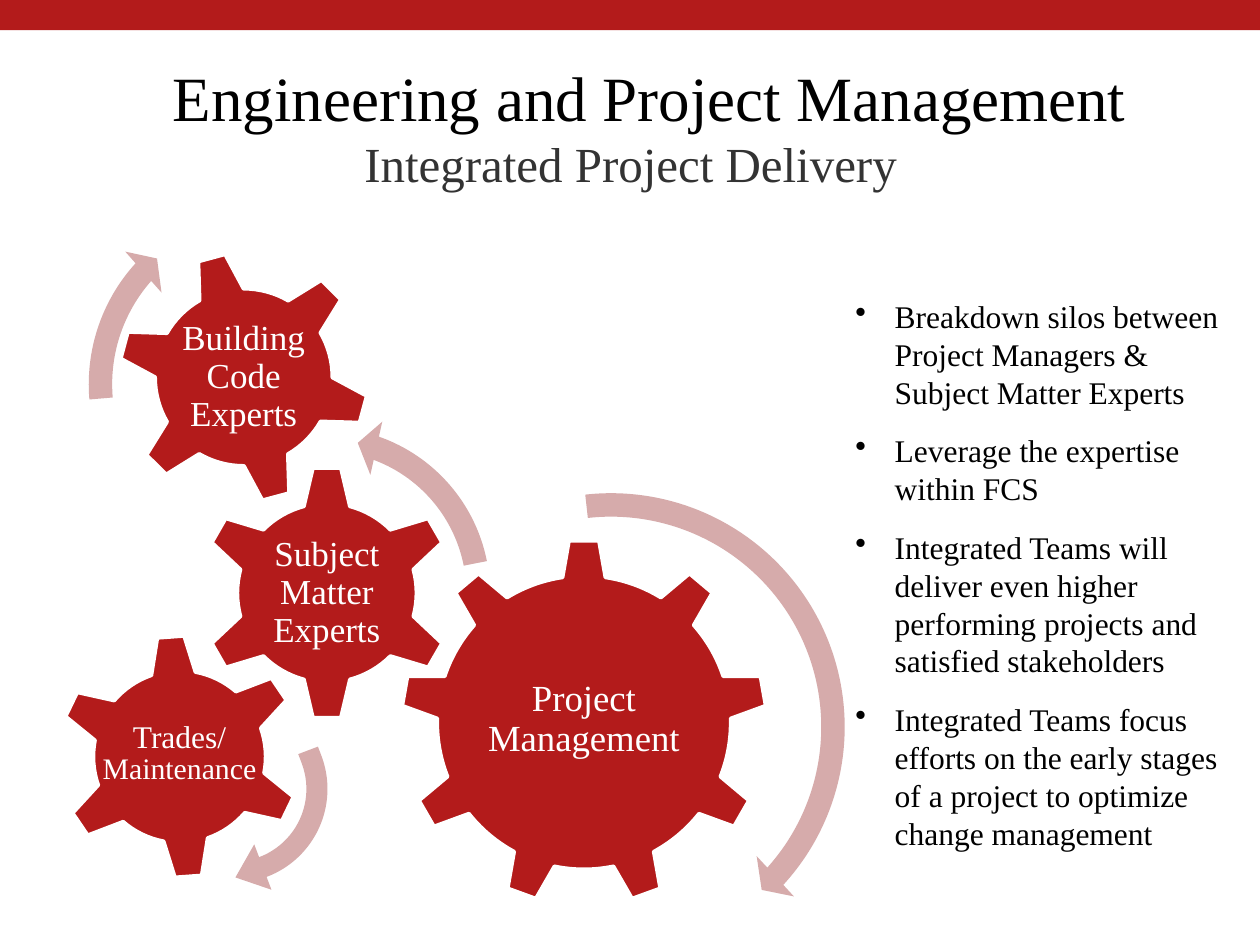
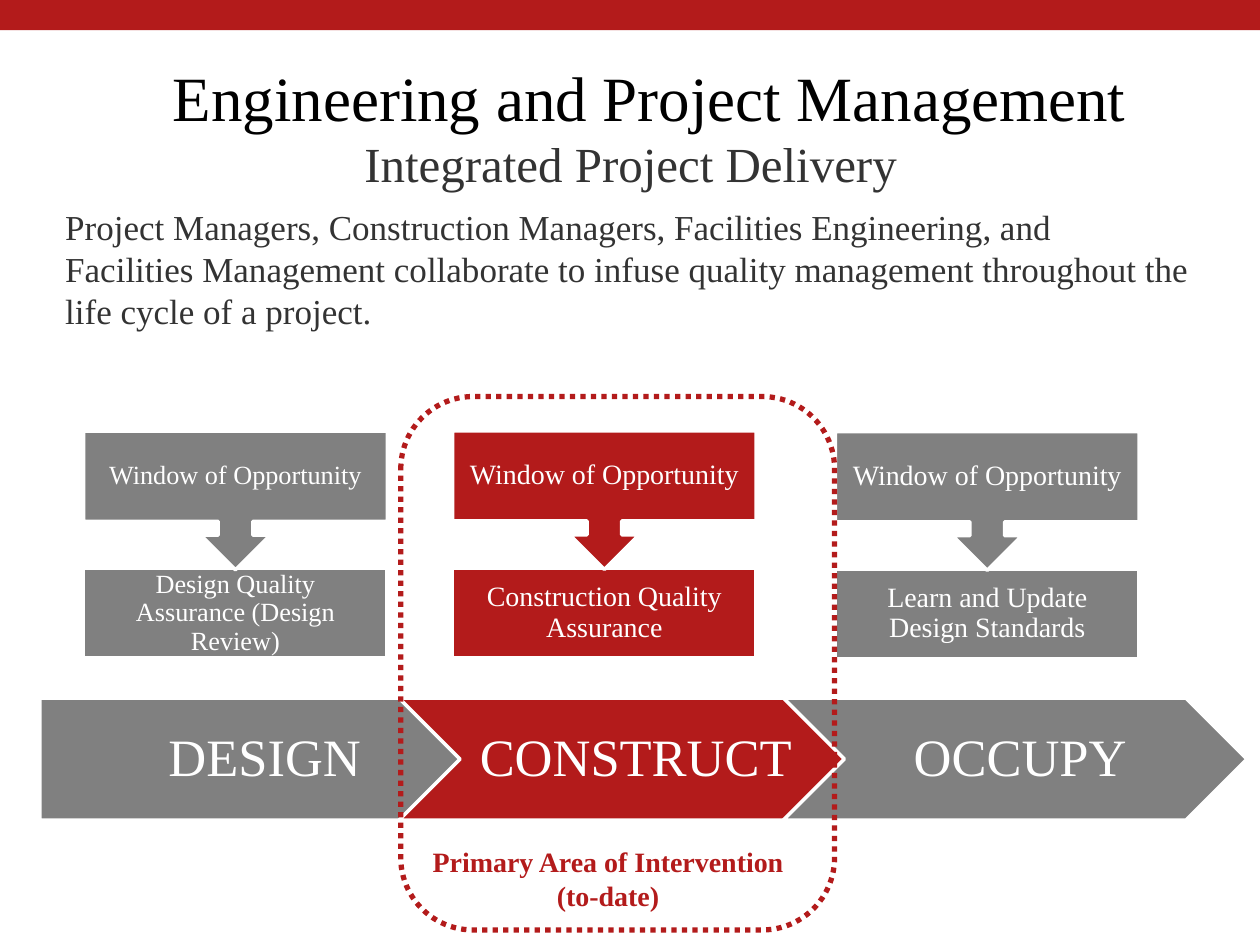
from lxml import etree
from pptx import Presentation
from pptx import util as u
from pptx.dml.color import RGBColor
from pptx.enum import dml, shapes, text
from pptx.oxml import ns

Pt = u.Pt
RED = RGBColor(0xB3, 0x1B, 0x1B)
PINK = RGBColor(0xD6, 0xAB, 0xAB)
GRAY = RGBColor(0x80, 0x80, 0x80)
DARK = RGBColor(0x33, 0x33, 0x33)
BLACK = RGBColor(0, 0, 0)
WHITE = RGBColor(0xFF, 0xFF, 0xFF)
FONT = "Times New Roman"
SHAPE = shapes.MSO_SHAPE
LEFT, CENTER = text.PP_ALIGN.LEFT, text.PP_ALIGN.CENTER
TOP, MIDDLE = text.MSO_ANCHOR.TOP, text.MSO_ANCHOR.MIDDLE
INSETS = (7.2, 3.6, 7.2, 3.6)


def add_bullet(para, indent):
    properties = para._p.get_or_add_pPr()
    properties.set("marL", str(Pt(indent)))
    properties.set("indent", str(-Pt(indent)))
    bullet = etree.SubElement(properties, ns.qn("a:buChar"))
    bullet.set("char", "•")


def add_text(page, bounds, *lines, size=18, color=BLACK, align=LEFT, anchor=TOP,
             bold=False, insets=INSETS, spacing=None, after=0, bullet_indent=0):
    """Add a text box; each line becomes a paragraph."""
    box = page.shapes.add_textbox(*map(Pt, bounds))
    frame = box.text_frame
    frame.word_wrap = True
    frame.vertical_anchor = anchor
    (frame.margin_left, frame.margin_top,
     frame.margin_right, frame.margin_bottom) = map(Pt, insets)
    for index, line in enumerate(lines):
        para = frame.paragraphs[0] if index == 0 else frame.add_paragraph()
        if bullet_indent:
            add_bullet(para, bullet_indent)
        para.alignment = align
        para.space_after = Pt(after)
        if spacing:
            para.line_spacing = spacing
        span = para.add_run()
        span.text = line
        span.font.name, span.font.size = FONT, Pt(size)
        span.font.bold, span.font.color.rgb = bold, color
    return box


def add_label(page, bounds, *lines, **style):
    """Add white centred text for a diagram part."""
    style = {"color": WHITE, "align": CENTER, "anchor": MIDDLE,
             "spacing": 0.9, "insets": (0, 0, 0, 0), **style}
    return add_text(page, bounds, *lines, **style)


def add_figure(page, kind, bounds, fill=None, line=None, weight=2,
               rotation=0, adjustments=()):
    figure = page.shapes.add_shape(kind, *map(Pt, bounds))
    figure.shadow.inherit = False
    figure.rotation = rotation
    for index, value in enumerate(adjustments):
        figure.adjustments[index] = value
    if fill is None:
        figure.fill.background()
    else:
        figure.fill.solid()
        figure.fill.fore_color.rgb = fill
    if line is None:
        figure.line.fill.background()
    else:
        figure.line.color.rgb = line
        figure.line.width = Pt(weight)
    return figure


def add_page(deck):
    """Add a page with the top band, title and subtitle."""
    page = deck.slides.add_slide(deck.slide_layouts[6])
    add_figure(page, SHAPE.RECTANGLE, (0, 0, 720, 17.3), RED)
    add_text(page, (22.3, 25.2, 697.7, 59.8), "Engineering and Project Management",
             size=36, align=CENTER, anchor=MIDDLE)
    add_text(page, (191.5, 72.7, 337.7, 41), "Integrated Project Delivery",
             size=28, color=DARK, align=CENTER)
    return page


def add_gears(page, left, top):
    # Gears: kind, centre, size, rotation, label, label centre shift, label size, font size
    gears = [
        (SHAPE.GEAR_9, 301.7, 304.9, 209.5, 0, ["Project Management"], -1.8, (120.2, 104), 21),
        (SHAPE.GEAR_6, 154.8, 230.8, 146, 0, ["Subject Matter Experts"], 0, (68.4, 68.4), 20),
        (SHAPE.GEAR_6, 107.3, 107.6, 144.5, 345, ["Building Code Experts"], 0, (77, 77), 20),
        (SHAPE.GEAR_6, 70.6, 324.4, 140.4, 55.8, ["Trades/", "Maintenance"], -2.5, (98, 69), 18),
    ]
    for kind, x, y, size, rotation, lines, shift, (width, height), font_size in gears:
        x, y = left + x, top + y
        add_figure(page, kind, (x - size / 2, y - size / 2, size, size),
                   RED, WHITE, rotation=rotation)
        label = add_label(page, (x - width / 2, y + shift - height / 2, width, height),
                          *lines, size=font_size)
        if len(lines) > 1:
            first, last = label.text_frame.paragraphs
            first.space_after = Pt(6)
            last.line_spacing = 0.5
            last.runs[0].font.size = Pt(17)

    # Arrows showing the turning direction
    arrows = [
        (SHAPE.CIRCULAR_ARROW, 174.6, 164.9, 285.1, 285.1, 0,
         (0.047, 2.99, 25.349, 158.215, 0.055)),
        (SHAPE.LEFT_CIRCULAR_ARROW, 49.4, 127.4, 207.4, 207.4, 115,
         (0.065, 4.3, 104.891, 140.272, 0.075)),
        (SHAPE.CIRCULAR_ARROW, 9.8, 0, 223.2, 223.2, 0,
         (0.06, 3.941, 133.138, 105.082, 0.07)),
        (SHAPE.BENT_ARROW, 93.3, 329, 70.6, 67, 159.2, (0.18, 0.207, 0.25, 0.801)),
    ]
    for kind, x, y, width, height, rotation, adjustments in arrows:
        add_figure(page, kind, (left + x, top + y, width, height), PINK,
                   rotation=rotation, adjustments=adjustments)


def add_benefits(page, bounds):
    add_text(page, bounds,
             "Breakdown silos between Project Managers & Subject Matter Experts",
             "Leverage the expertise within FCS",
             "Integrated Teams will deliver even higher performing projects and "
             "satisfied stakeholders",
             "Integrated Teams focus efforts on the early stages of a project to "
             "optimize change management",
             after=12, bullet_indent=22.5)


def add_phases(page, left, top, height=69.8):
    """Add the row of phase arrows."""
    step, width = 212.4, 265
    phases = [("DESIGN", GRAY), ("CONSTRUCT", RED), ("OCCUPY", GRAY)]
    for index, (name, color) in enumerate(phases):
        x = left + (index * step if index < 2 else 424.8)
        x = left if index == 0 else left + 205.2 + (index - 1) * 219.6
        kind = SHAPE.CHEVRON if index else SHAPE.PENTAGON
        add_figure(page, kind, (x, top, width, height), color, WHITE)
        if index:
            label_bounds, inset = (x + height / 2, top, 194.4, height), 9.4
        else:
            label_bounds, inset = (x, top, 247.7, height), 12.2
        add_label(page, label_bounds, name, size=30, insets=(inset, 6.5, 2.9, 6.5))


def add_window(page, left, top, outcome, color, size):
    """Add a callout that points down to its outcome."""
    width, height, drop = 173.5, 51.1, 78.5
    add_figure(page, SHAPE.RECTANGLE, (left, top + drop, width, height), color, WHITE)
    add_figure(page, SHAPE.UP_ARROW_CALLOUT, (left, top, width, 79.2),
               color, WHITE, rotation=180)
    for y, line in ((top + drop, outcome), (top, "Window of Opportunity")):
        add_label(page, (left, y, width, height), line, size=size, insets=(8.5,) * 4)


def add_intervention(page, left, top, width, height):
    """Add the dotted frame and its caption."""
    add_text(page, (left - 11.5, top + 252.7, 260, 46.1),
             "Primary Area of Intervention", "(to-date)",
             size=16, color=RED, bold=True, align=CENTER)
    frame = add_figure(page, SHAPE.ROUNDED_RECTANGLE, (left, top, width, height),
                       line=RED, weight=3)
    frame.line.dash_style = dml.MSO_LINE.ROUND_DOT


def build_teams(deck):
    page = add_page(deck)
    add_gears(page, 32, 108)
    add_benefits(page, (481.7, 166.2, 228.2, 361.6))


def build_life_cycle(deck):
    page = add_page(deck)
    add_text(page, (30.2, 113.8, 675.4, 79.9),
             "Project Managers, Construction Managers, Facilities Engineering, and",
             "Facilities Management collaborate to infuse quality management "
             "throughout the life cycle of a project.",
             size=20, color=DARK)
    add_phases(page, 22.8, 398.9)
    add_window(page, 47.8, 246.4, "Design Quality Assurance (Design Review)", GRAY, 15)
    add_window(page, 258.6, 246.2, "Construction Quality Assurance", RED, 16)
    add_window(page, 477.4, 246.7, "Learn and Update Design Standards", GRAY, 16)
    add_intervention(page, 229, 226.6, 247.9, 304.8)


def main():
    deck = Presentation()
    deck.slide_width, deck.slide_height = Pt(720), Pt(540)
    build_teams(deck)
    build_life_cycle(deck)
    deck.save("out.pptx")


if __name__ == "__main__":
    main()
